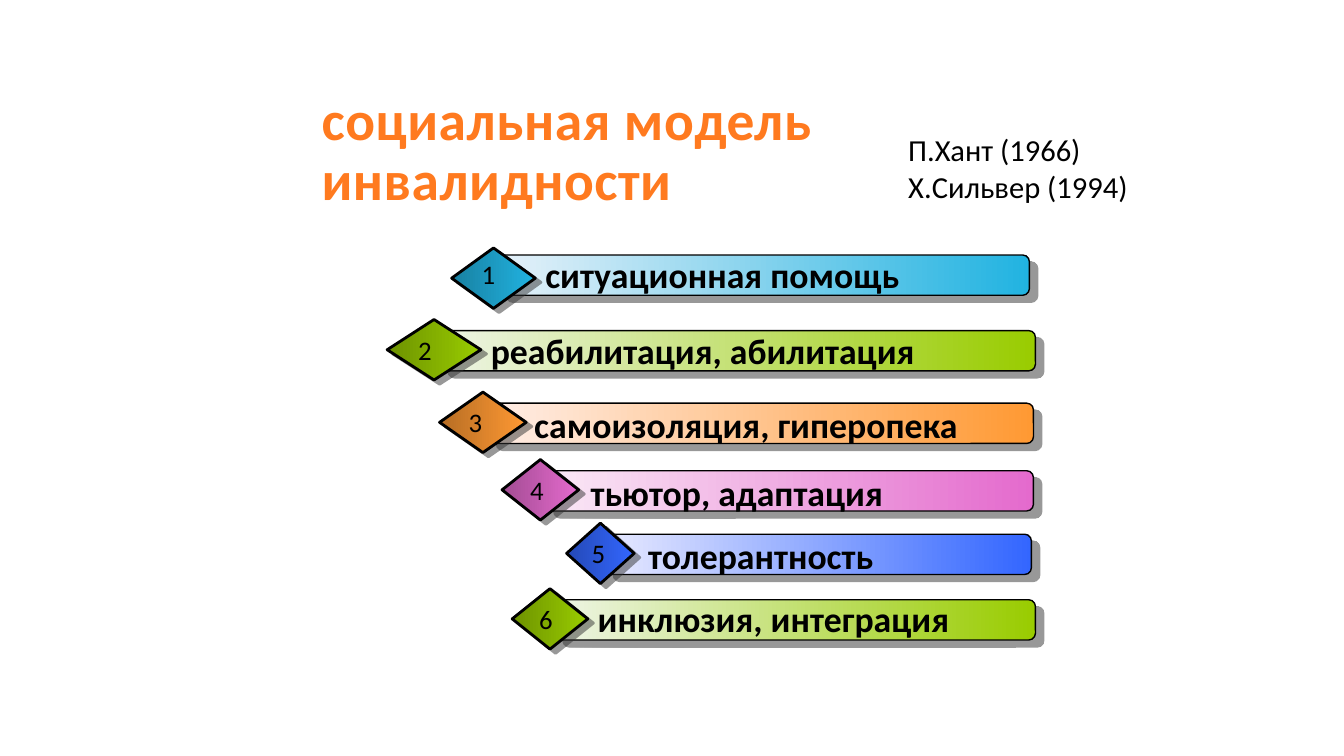
from dataclasses import dataclass
from lxml import etree
from pptx import Presentation
from pptx.dml.color import RGBColor
from pptx.enum.shapes import MSO_SHAPE
from pptx.enum.text import MSO_ANCHOR, MSO_AUTO_SIZE, PP_ALIGN
from pptx.oxml.ns import qn
from pptx.util import Inches, Pt

BAR, GEM = MSO_SHAPE.ROUNDED_RECTANGLE, MSO_SHAPE.DIAMOND
LEFT, MIDDLE = PP_ALIGN.LEFT, MSO_ANCHOR.MIDDLE
FIXED, GROW = MSO_AUTO_SIZE.NONE, MSO_AUTO_SIZE.SHAPE_TO_FIT_TEXT


@dataclass(frozen=True)
class Theme:
    font: str = "Calibri"
    ink: str = "000000"
    shade: str = "333333"
    title: tuple = ("FF7A1F", "CA5200")
    # diamond start, bar start, shared end
    blue: tuple = ("1880A1", "E6F1F9", "21B3E1")
    green: tuple = ("6D9200", "EEF5E6", "99CC00")
    orange: tuple = ("B66D24", "FFEEE7", "FF9933")
    pink: tuple = ("A34C93", "FAE9F6", "E46ACD")
    navy: tuple = ("2449B6", "E7E9FF", "3366FF")
    head: float = 39.6
    label: float = 25.5
    note: float = 21.8
    digit: float = 19.1


THEME = Theme()
BAR_H, GEM_H = 0.4, 0.6

# label, colours, bar top, bar right, diamond (left, width, rise),
# label (left, width, rise), digit left
ROWS = [
    ("ситуационная помощь", THEME.blue, 2.53, 10.21,
     (4.48, 0.83, 0.07), (5.31, 4.15, 0.07), 4.68),
    ("реабилитация, абилитация", THEME.green, 3.28, 10.27,
     (3.84, 0.93, 0.11), (4.77, 4.67, 0.07), 4.05),
    ("самоизоляция, гиперопека", THEME.orange, 4.0, 10.25,
     (4.36, 0.86, 0.11), (5.2, 4.45, 0.05), 4.55),
    ("тьютор, адаптация", THEME.pink, 4.67, 10.25,
     (4.98, 0.76, 0.11), (5.76, 3.72, 0.05), 5.16),
    ("толерантность", THEME.navy, 5.3, 10.23,
     (5.62, 0.67, 0.11), (6.33, 3.35, 0.05), 5.77),
    ("инклюзия, интеграция", THEME.green, 5.95, 10.27,
     (5.08, 0.75, 0.11), (5.83, 3.77, 0.08), 5.25),
]


def put(item, **values):
    for name, value in values.items():
        setattr(item, name, value)


def box(left, top, width, height):
    return [Inches(round(n, 2)) for n in (left, top, width, height)]


def blend(fill, colors, angle=0, start=0):
    """Fill with a two-stop linear gradient."""
    fill.gradient()
    fill.gradient_angle = angle
    for stop, tone, place in zip(fill.gradient_stops, colors, (start, 1)):
        stop.color.rgb = RGBColor.from_string(tone)
        stop.position = place


def shadow(shape, dist, angle):
    """Give a hard, half-transparent shadow."""
    shape.shadow.inherit = False
    effects = shape._element.spPr.find(qn("a:effectLst"))
    outer = etree.SubElement(effects, qn("a:outerShdw"), blurRad="0",
                             dist=str(Pt(dist)), dir=str(angle * 60000),
                             algn="ctr", rotWithShape="0")
    tone = etree.SubElement(outer, qn("a:srgbClr"), val=THEME.shade)
    etree.SubElement(tone, qn("a:alpha"), val="50000")


def block(shapes, kind, place, colors, weight, cast):
    shape = shapes.add_shape(kind, *box(*place))
    blend(shape.fill, colors)
    shape.line.color.rgb = RGBColor.from_string(THEME.ink)
    shape.line.width = Pt(weight)
    shadow(shape, *cast)


def text(shapes, place, lines, size, bold=False, wrap=False):
    frame = shapes.add_textbox(*box(*place)).text_frame
    put(frame, word_wrap=wrap, auto_size=GROW, text="\n".join(lines))
    for para in frame.paragraphs:
        put(para.font, name=THEME.font, size=Pt(size), bold=bold)
        para.font.color.rgb = RGBColor.from_string(THEME.ink)


def row(slide, number, label, colors, top, right, gem, words, digit):
    shapes = slide.shapes.add_group_shape().shapes
    dark, pale, full = colors
    left, width, rise = gem
    start = left + 0.56 * width
    block(shapes, BAR, (start, top, right - start, BAR_H),
          (pale, full), 1, (7.8, 40))
    block(shapes, GEM, (left, top - rise, width, GEM_H),
          (dark, full), 2, (5, 37))
    left, width, rise = words
    text(shapes, (left, top - rise, width, 0.53), [label],
         THEME.label, bold=True, wrap=True)
    text(shapes, (digit, top - 0.02, 0.34, 0.42), [str(number)], THEME.digit)


def heading(slide, words):
    title = slide.shapes.title
    left, top, width, height = box(3.09, 0.93, 7.16, 1.16)
    put(title, left=left, top=top, width=width, height=height)
    frame = title.text_frame
    put(frame, text=words, vertical_anchor=MIDDLE, word_wrap=True,
        auto_size=FIXED)
    para = frame.paragraphs[0]
    put(para, alignment=LEFT, line_spacing=0.9)
    font = para.runs[0].font
    put(font, name=THEME.font, size=Pt(THEME.head), bold=True)
    blend(font.fill, THEME.title, angle=270, start=0.25)
    font._element.set("spc", "40")


def main():
    deck = Presentation()
    put(deck, slide_width=Inches(13.33), slide_height=Inches(7.5))
    slide = deck.slides.add_slide(deck.slide_layouts[5])
    heading(slide, "социальная модель инвалидности")
    for number, values in enumerate(ROWS, 1):
        row(slide, number, *values)
    text(slide.shapes, (8.91, 1.25, 2.4, 0.83),
         ["П.Хант (1966)", "Х.Сильвер (1994)"], THEME.note)
    deck.save("out.pptx")


if __name__ == "__main__":
    main()
